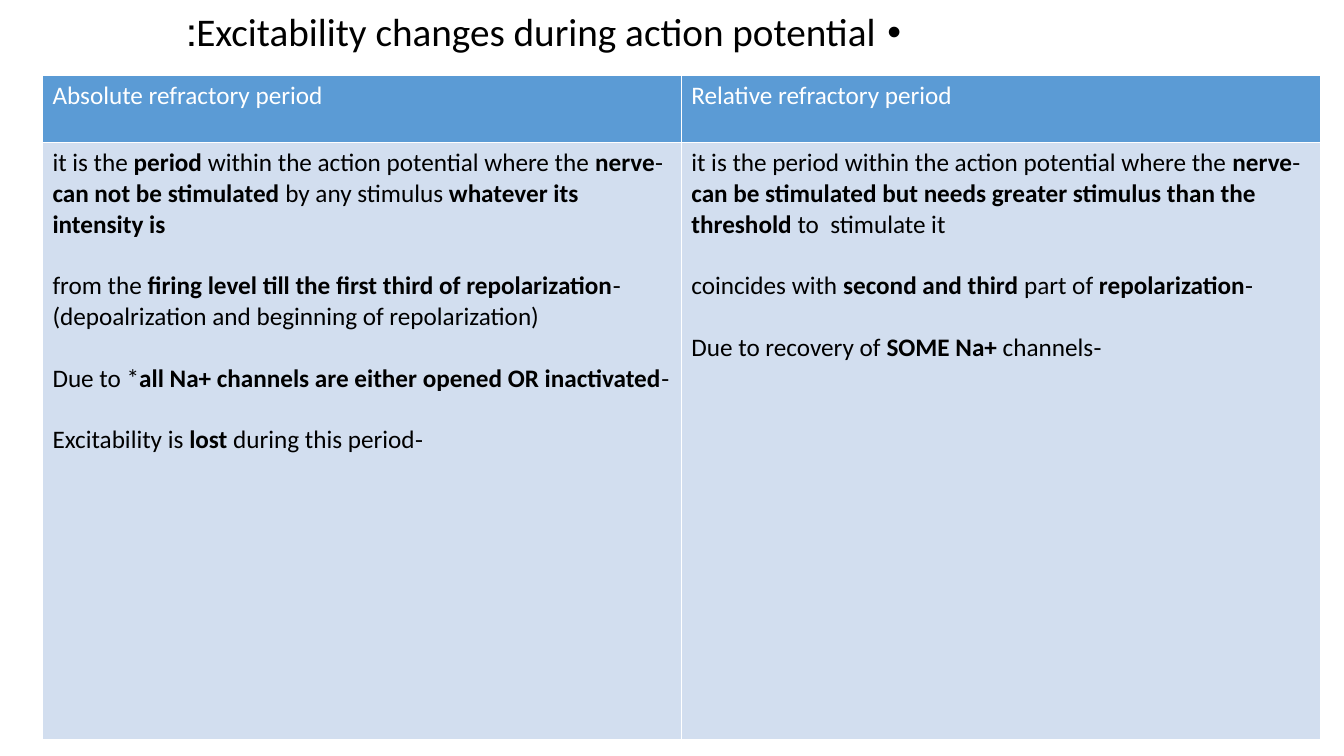
from dataclasses import dataclass

from lxml import etree
from pptx import Presentation
from pptx import util as u
from pptx.dml import color
from pptx.enum import text
from pptx.oxml import ns

HUES = {"head": "5B9BD5", "body": "D2DEEF", "white": "FFFFFF", "black": "000000"}
FACE = "Calibri"
GAP = 22  # points between the points of a cell


@dataclass
class Period:
    name: str
    facts: list[str]  # every second part between bars is bold


PERIODS = [
    Period("Absolute refractory period", [
        "-it is the |period| within the action potential where the "
        "|nerve can not be stimulated |by any stimulus |whatever its intensity is",
        "-from the |firing level till the first third of repolarization"
        "| (depoalrization and beginning of repolarization)",
        "-Due to *|all Na+ channels are either opened OR inactivated",
        "-Excitability is |lost |during this period",
    ]),
    Period("Relative refractory period", [
        "-it is the period within the action potential where the "
        "|nerve can be stimulated but needs greater stimulus than the threshold "
        "|to  stimulate it",
        "-coincides with |second and third |part of |repolarization",
        "-Due to recovery of |SOME Na+ |channels",
    ]),
]


def paint(hue: str) -> color.RGBColor:
    return color.RGBColor.from_string(HUES[hue])


def write(para, line: str, size: int, hue: str) -> None:
    """Fill a right-to-left paragraph that sits at the left edge."""
    para.alignment = text.PP_ALIGN.LEFT
    para._p.get_or_add_pPr().set("rtl", "1")
    para.font.name, para.font.size = FACE, u.Pt(size)
    para.font.color.rgb = paint(hue)
    for i, part in enumerate(line.split("|")):
        run = para.add_run()
        run.text = part
        run.font.bold = i % 2 == 1


def edge(cell) -> None:
    """Draw thin white borders, placed ahead of the cell fill."""
    props = cell._tc.get_or_add_tcPr()
    for i, tag in enumerate(("a:lnL", "a:lnR", "a:lnT", "a:lnB")):
        line = etree.Element(ns.qn(tag), w=str(u.Pt(1)))
        fill = etree.SubElement(line, ns.qn("a:solidFill"))
        etree.SubElement(fill, ns.qn("a:srgbClr"), val=HUES["white"])
        props.insert(i, line)


def fill_cell(cell, lines: list[str], back: str, ink: str) -> None:
    cell.fill.solid()
    cell.fill.fore_color.rgb = paint(back)
    edge(cell)
    frame = cell.text_frame
    for i, line in enumerate(lines):
        para = frame.add_paragraph() if i else frame.paragraphs[0]
        write(para, line, 18, ink)
        if i:
            para.space_before = u.Pt(GAP)


def add_title(slide) -> None:
    box = slide.shapes.add_textbox(u.Cm(4.45), u.Cm(0.2), u.Cm(24.97), u.Cm(18.62))
    box.text_frame.word_wrap = True
    para = box.text_frame.paragraphs[0]
    props = para._p.get_or_add_pPr()
    props.set("marL", str(u.Cm(0.64)))
    props.set("indent", str(-u.Cm(0.64)))
    etree.SubElement(props, ns.qn("a:buFont"), typeface="Arial")
    etree.SubElement(props, ns.qn("a:buChar"), char="•")
    para.line_spacing, para.space_before = 0.9, u.Pt(10)
    write(para, "Excitability changes during action potential:", 28, "black")


def add_grid(slide) -> None:
    wide, heights = u.Cm(16.1), (u.Cm(1.7), u.Cm(15.04))
    grid = slide.shapes.add_table(
        2, len(PERIODS), u.Cm(1.07), u.Cm(1.9), wide * len(PERIODS), sum(heights)
    ).table
    for row, high in zip(grid.rows, heights):
        row.height = high
    for i, period in enumerate(PERIODS):
        grid.columns[i].width = wide
        fill_cell(grid.cell(0, i), [period.name], "head", "white")
        fill_cell(grid.cell(1, i), period.facts, "body", "black")


def main() -> None:
    deck = Presentation()
    deck.slide_width, deck.slide_height = u.Cm(33.87), u.Cm(19.05)
    slide = deck.slides.add_slide(deck.slide_layouts[6])
    add_title(slide)
    add_grid(slide)
    deck.save("out.pptx")


if __name__ == "__main__":
    main()
